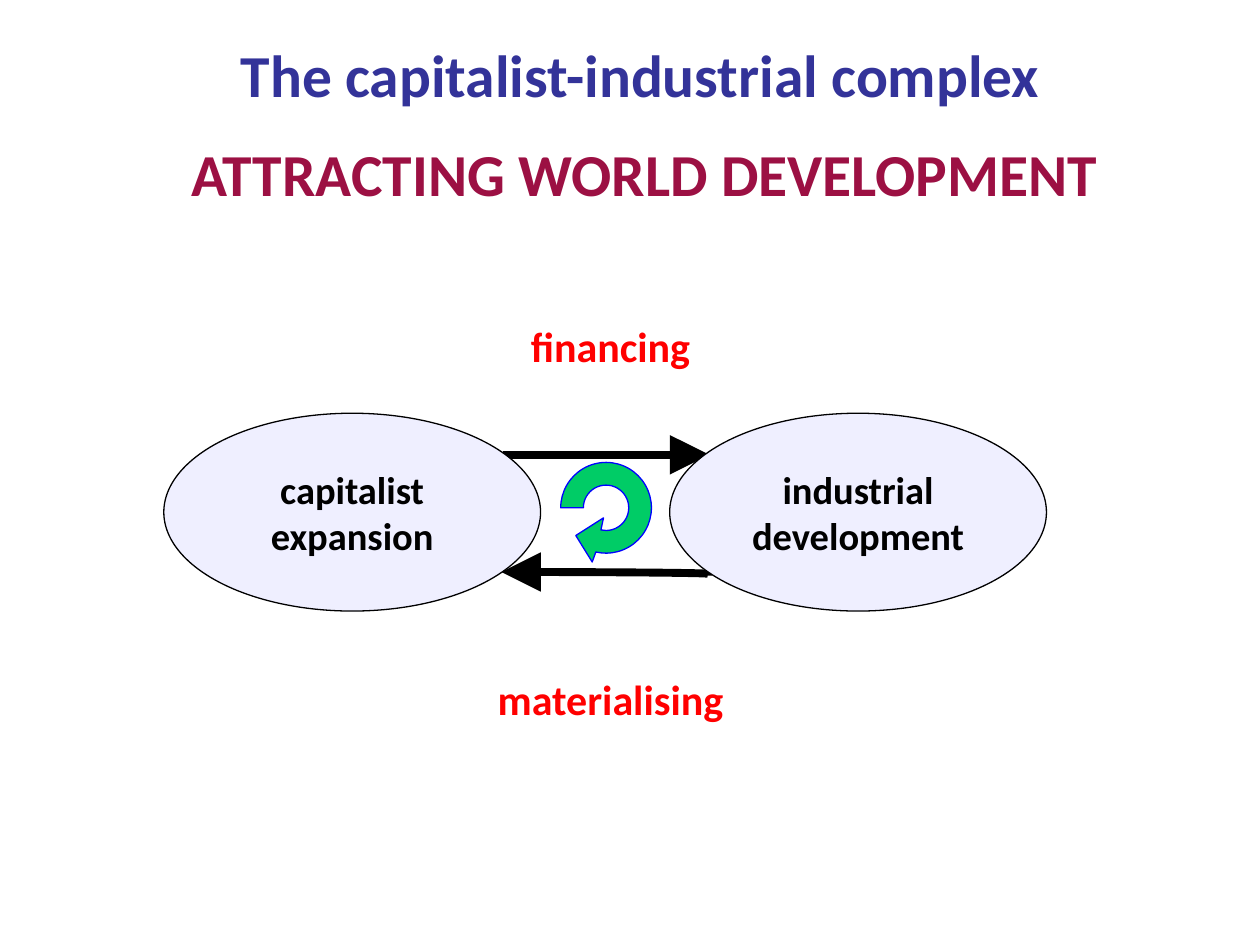
from math import cos, radians, sin

from lxml.etree import Element, SubElement
from pptx import Presentation
from pptx.dml.color import RGBColor
from pptx.enum.shapes import MSO_CONNECTOR, MSO_SHAPE
from pptx.enum.text import MSO_ANCHOR, MSO_AUTO_SIZE, PP_ALIGN
from pptx.oxml.ns import qn
from pptx.util import Inches, Pt

COLORS = {
    "title": "333399",
    "subtitle": "9C1043",
    "label": "FF0000",
    "black": "000000",
    "ellipse": "EFEFFF",
    "cycle": "00CC66",
    "cycle_line": "0000FF",
}
COLS, ROWS = 100, 75
CELL = Inches(10) // COLS


def grid(*cells):
    return [round(c * CELL) for c in cells]


def rgb(name):
    return RGBColor.from_string(COLORS[name])


def set_attrs(obj, values):
    for name, value in values.items():
        setattr(obj, name, value)


def write(sp, text, size, color, anchor=MSO_ANCHOR.TOP):
    tf = sp.text_frame
    frame_format = {
        "word_wrap": True,
        "auto_size": MSO_AUTO_SIZE.NONE,
        "vertical_anchor": anchor,
        "margin_left": Inches(0.1),
        "margin_right": Inches(0.1),
        "margin_top": Inches(0.05),
        "margin_bottom": Inches(0.05),
    }
    set_attrs(tf, frame_format)
    p = tf.paragraphs[0]
    p.text = text
    set_attrs(p, {"alignment": PP_ALIGN.CENTER, "line_spacing": 1.0, "space_before": Pt(0)})
    for r in p.runs:
        set_attrs(r.font, {"name": "Calibri", "size": Pt(size), "bold": True})
        r.font.color.rgb = rgb(color)


def paint(sp, fill, line):
    sp.shadow.inherit = False
    sp.fill.solid()
    sp.fill.fore_color.rgb = rgb(fill)
    sp.line.color.rgb = rgb(line)
    sp.line.width = Pt(0.75)


def add_title(s, text, box):
    sp = s.shapes.title
    set_attrs(sp, dict(zip(("left", "top", "width", "height"), grid(*box))))
    write(sp, text, 34, "title")


def add_text(s, text, box, size, color):
    write(s.shapes.add_textbox(*grid(*box)), text, size, color)


def add_ellipse(s, text, box):
    sp = s.shapes.add_shape(MSO_SHAPE.OVAL, *grid(*box))
    paint(sp, "ellipse", "black")
    write(sp, text, 22, "black", MSO_ANCHOR.MIDDLE)


def add_arrow(s, start, end):
    sp = s.shapes.add_connector(MSO_CONNECTOR.CURVE, *grid(*start, *end))
    sp.line.color.rgb = rgb("black")
    sp.line.width = Pt(4.5)
    pr = sp._element.spPr
    SubElement(pr.find(".//" + qn("a:avLst")), qn("a:gd"), name="adj1", fmla="val 0")
    SubElement(pr.find(qn("a:ln")), qn("a:tailEnd"), type="triangle", w="lg", len="lg")
    SubElement(pr, qn("a:effectLst"))


def bend(segment, radius, start, end):
    r = str(grid(radius)[0])
    arc = Element(qn("a:arcTo"), wR=r, hR=r, stAng=str(start % 360 * 60000),
                  swAng=str((end - start) * 60000))
    segment.getparent().replace(segment, arc)


def add_cycle(s, cx, cy, radius):
    def point(angle, r):
        return grid(cx + r * cos(radians(angle)), cy + r * sin(radians(angle)))

    outer = [-180, -90, 0, 90, 103]
    inner = outer[::-1]
    rings = ((inner, radius / 2), (outer, radius))
    points = [point(a, r) for angles, r in rings for a in angles]
    head = [grid(cx + dx, cy + dy) for dx, dy in ((-1.1, 4.3), (-2.4, 2.2), (-0.2, 0.8))]
    fb = s.shapes.build_freeform(*points[0])
    fb.add_line_segments(points[1:] + head)
    sp = fb.convert_to_shape()
    segments = list(sp._element.iter(qn("a:lnTo")))
    for i, (angles, r) in enumerate(rings):
        for j, (start, end) in enumerate(zip(angles, angles[1:])):
            bend(segments[i * len(angles) + j], r, start, end)
    paint(sp, "cycle", "cycle_line")


def main():
    prs = Presentation()
    set_attrs(prs, {"slide_width": COLS * CELL, "slide_height": ROWS * CELL})
    s = prs.slides.add_slide(prs.slide_layouts[5])

    add_title(s, "The capitalist-industrial complex", (8.7, 2.5, 84.2, 6.7))
    add_text(s, "ATTRACTING WORLD DEVELOPMENT", (4.7, 10.4, 92.9, 6.7), 34, "subtitle")

    add_arrow(s, (39.9, 36.1), (56.3, 36.1))
    add_arrow(s, (56.2, 45.7), (39.8, 45.4))
    add_cycle(s, 48.1, 40.3, 3.6)

    for i, text in enumerate(("capitalist\vexpansion", "industrial\vdevelopment")):
        add_ellipse(s, text, (13 + 40.15 * i, 32.8, 29.9, 15.7))
    for text, top in (("financing", 24.95), ("materialising", 52.95)):
        add_text(s, text, (35.05, top, 26.8, 5), 24, "label")

    prs.save("out.pptx")


if __name__ == "__main__":
    main()
